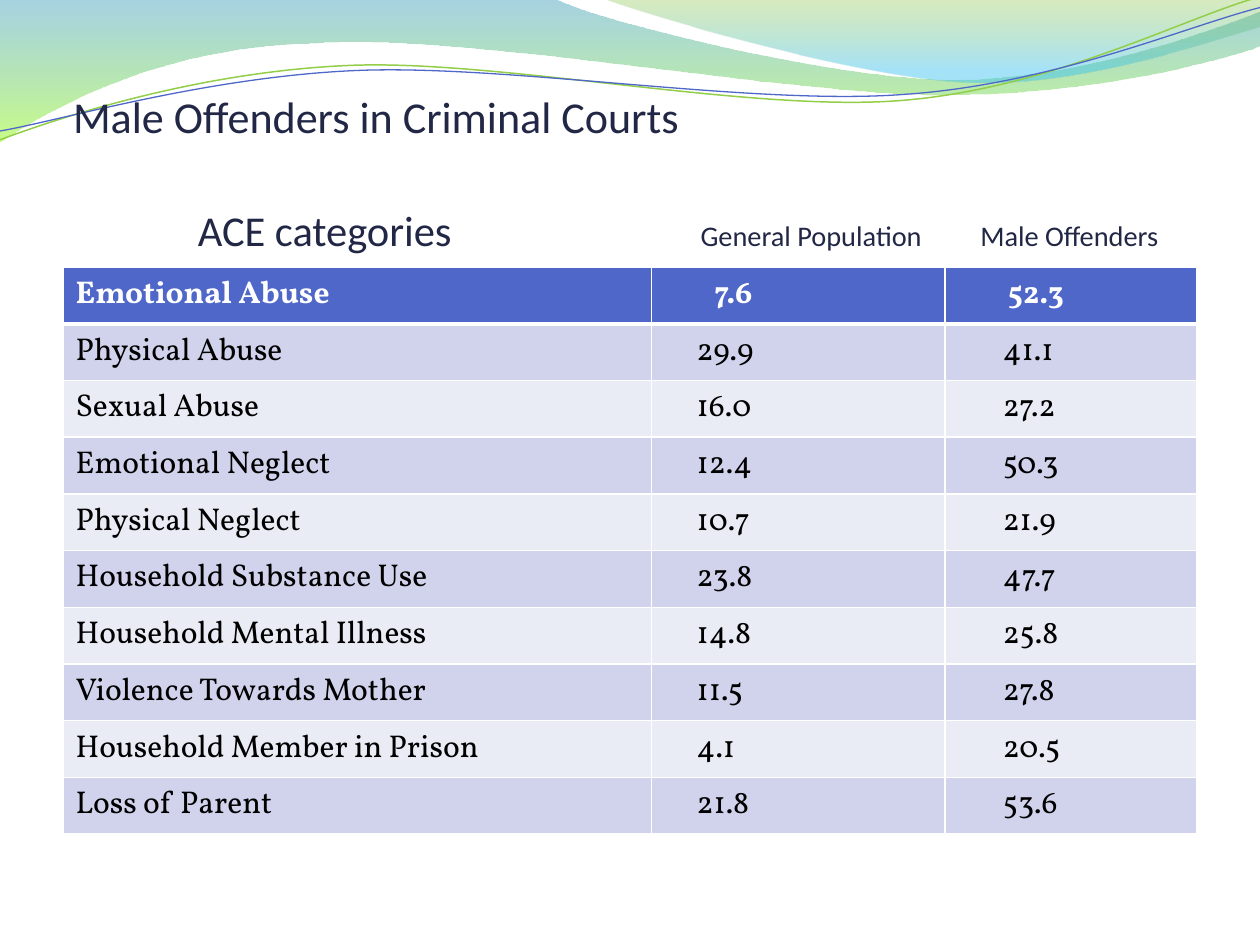
from dataclasses import dataclass

from lxml.etree import SubElement
from pptx import Presentation
from pptx.dml.color import RGBColor
from pptx.enum.text import MSO_ANCHOR, MSO_AUTO_SIZE, PP_ALIGN
from pptx.oxml.ns import qn
from pptx.util import Inches, Pt


@dataclass(frozen=True)
class Theme:
    heading_font: str = "Calibri"
    table_font: str = "Vollkorn"
    heading: str = "212745"
    header_fill: str = "4E67C8"
    bands: tuple = ("D0D3EB", "E9EBF5")
    white: str = "FFFFFF"
    black: str = "000000"
    green_line: str = "93CE48"
    blue_line: str = "4E67C8"
    left_wave: tuple = ((0, "3B9CBF", 45), (1, "9CFA24", 55))
    right_wave: tuple = ((0, "7EBE2C", 30), (0.8, "39C1F1", 45))
    title_size: float = 25.2
    category_size: float = 24.3
    column_size: float = 16.2
    table_size: float = 18


THEME = Theme()

LEFT_WAVE = [
    [(0, 0)], [(4.4, -0.01)],
    [(4.76, 0.17), (6.64, 0.63), (7.58, 0.63)],
    [(8.53, 0.63), (9.58, 0.26), (10, 0.09)],
    [(10.01, 0.36)],
    [(9.83, 0.44), (8.7, 0.76), (7.46, 0.75)],
    [(6.22, 0.75), (3.82, 0.28), (2.57, 0.34)],
    [(1.29, 0.36), (0.46, 0.83), (-0.01, 1.13)],
]
RIGHT_WAVE = [
    [(4.79, -0.01)],
    [(5.09, 0.11), (6.82, 0.62), (7.69, 0.65)],
    [(8.56, 0.69), (9.61, 0.32), (10, 0.21)],
    [(10, 0)],
]
GREEN_CURVE = [
    [(0, 1.11)],
    [(0.48, 0.93), (1.58, 0.57), (2.77, 0.52)],
    [(3.95, 0.47), (5.93, 0.89), (7.13, 0.8)],
    [(8.33, 0.71), (9.38, 0.15), (9.98, -0.02)],
]
BLUE_CURVE = [
    [(0, 1.04)],
    [(0.47, 0.96), (1.64, 0.61), (2.83, 0.56)],
    [(4.03, 0.51), (5.97, 0.84), (7.17, 0.75)],
    [(8.36, 0.67), (9.41, 0.21), (10, 0.06)],
]

ROWS = [
    ("Emotional Abuse", "7.6", "52.3"),
    ("Physical Abuse", "29.9", "41.1"),
    ("Sexual Abuse", "16.0", "27.2"),
    ("Emotional Neglect", "12.4", "50.3"),
    ("Physical Neglect", "10.7", "21.9"),
    ("Household Substance Use", "23.8", "47.7"),
    ("Household Mental Illness", "14.8", "25.8"),
    ("Violence Towards Mother", "11.5", "27.8"),
    ("Household Member in Prison", "4.1", "20.5"),
    ("Loss of Parent", "21.8", "53.6"),
]
COL_WIDTHS = (4.67, 2.33, 2)
ROW_HEIGHT = 0.45
HEADER_INDENTS = (0.1, 0.5, 0.5)
BODY_INDENTS = (0.1, 0.36, 0.46)
HEADING_TABS = (0.99, 4.98, 7.2)


def rgb(value):
    return RGBColor.from_string(value)


def add_run(p, text, font, size, color, bold=False):
    r = p.add_run()
    r.text = text
    r.font.name = font
    r.font.size = Pt(size)
    r.font.bold = bold
    r.font.color.rgb = rgb(color)


def add_curves(slide, segments, closed=False):
    points = [(Inches(x), Inches(y)) for seg in segments for x, y in seg]
    builder = slide.shapes.build_freeform(*points[0])
    builder.add_line_segments(points[1:], close=closed)
    s = builder.convert_to_shape()
    s.shadow.inherit = False
    steps = iter(list(s._element.iter(qn("a:lnTo"))))
    for seg in segments[1:]:
        group = [next(steps) for _ in seg]
        if len(group) == 3:
            group[0].tag = qn("a:cubicBezTo")
            for step in group[1:]:
                group[0].append(step[0])
                step.getparent().remove(step)
    return s


def add_wave(slide, segments, stops):
    s = add_curves(slide, segments, closed=True)
    s.line.fill.background()
    s.fill.gradient()
    s.fill.gradient_angle = 270
    for stop, (position, color, _) in zip(s.fill.gradient_stops, stops):
        stop.position = position
        stop.color.rgb = rgb(color)
    colors = s._element.spPr.iter(qn("a:srgbClr"))
    for color, (_, _, alpha) in zip(colors, stops):
        SubElement(color, qn("a:alpha"), val=str(alpha * 1000))


def add_line(slide, segments, color, width):
    s = add_curves(slide, segments)
    s.fill.background()
    s.line.color.rgb = rgb(color)
    s.line.width = Pt(width)


def set_tabs(p, stops):
    tabs = SubElement(p._p.get_or_add_pPr(), qn("a:tabLst"))
    for stop in stops:
        SubElement(tabs, qn("a:tab"), pos=str(Inches(stop)), algn="l")


def add_headings(slide):
    s = slide.shapes.title
    s.left, s.top, s.width, s.height = map(Inches, (0.58, 0.71, 9, 1.33))
    slide.shapes._spTree.append(s._element)
    tf = s.text_frame
    tf.word_wrap = True
    tf.auto_size = MSO_AUTO_SIZE.NONE
    tf.vertical_anchor = MSO_ANCHOR.TOP
    tf.margin_left = tf.margin_right = tf.margin_top = tf.margin_bottom = 0
    title, labels = tf.paragraphs[0], tf.add_paragraph()
    for p, before in ((title, 0), (labels, 35)):
        p.alignment = PP_ALIGN.LEFT
        p.line_spacing = 1.0
        p.space_before = Pt(before)
    set_tabs(labels, HEADING_TABS)
    for p, text, size in (
        (title, "Male Offenders in Criminal Courts", THEME.title_size),
        (labels, "\tACE categories", THEME.category_size),
        (labels, "\tGeneral Population\tMale Offenders", THEME.column_size),
    ):
        add_run(p, text, THEME.heading_font, size, THEME.heading)


def add_border(cell, side, width):
    tcPr = cell._tc.get_or_add_tcPr()
    ln = SubElement(tcPr, qn(f"a:ln{side}"), w=str(Pt(width)))
    fill = SubElement(ln, qn("a:solidFill"))
    SubElement(fill, qn("a:srgbClr"), val=THEME.white)


def fill_cell(cell, text, row, indent):
    header = row == 0
    widths = {"L": 1, "R": 1, "T": 3 if row == 1 else 1, "B": 3 if header else 1}
    for side, width in widths.items():
        add_border(cell, side, width)
    cell.fill.solid()
    cell.fill.fore_color.rgb = rgb(
        THEME.header_fill if header else THEME.bands[(row - 1) % 2])
    cell.margin_left = Inches(indent)
    color = THEME.white if header else THEME.black
    add_run(cell.text_frame.paragraphs[0], text, THEME.table_font,
            THEME.table_size, color, header)


def add_scores(slide):
    table = slide.shapes.add_table(
        len(ROWS), len(COL_WIDTHS), Inches(0.5), Inches(2.12),
        Inches(sum(COL_WIDTHS)), Inches(ROW_HEIGHT * len(ROWS))).table
    for column, width in zip(table.columns, COL_WIDTHS):
        column.width = Inches(width)
    for i, values in enumerate(ROWS):
        table.rows[i].height = Inches(ROW_HEIGHT)
        indents = BODY_INDENTS if i else HEADER_INDENTS
        for j, (text, indent) in enumerate(zip(values, indents)):
            fill_cell(table.cell(i, j), text, i, indent)


def main():
    prs = Presentation()
    prs.slide_width, prs.slide_height = Inches(10), Inches(7.5)
    slide = prs.slides.add_slide(prs.slide_layouts[5])
    add_wave(slide, LEFT_WAVE, THEME.left_wave)
    add_wave(slide, RIGHT_WAVE, THEME.right_wave)
    add_line(slide, GREEN_CURVE, THEME.green_line, 0.85)
    add_line(slide, BLUE_CURVE, THEME.blue_line, 0.75)
    add_headings(slide)
    add_scores(slide)
    prs.save("out.pptx")


if __name__ == "__main__":
    main()
